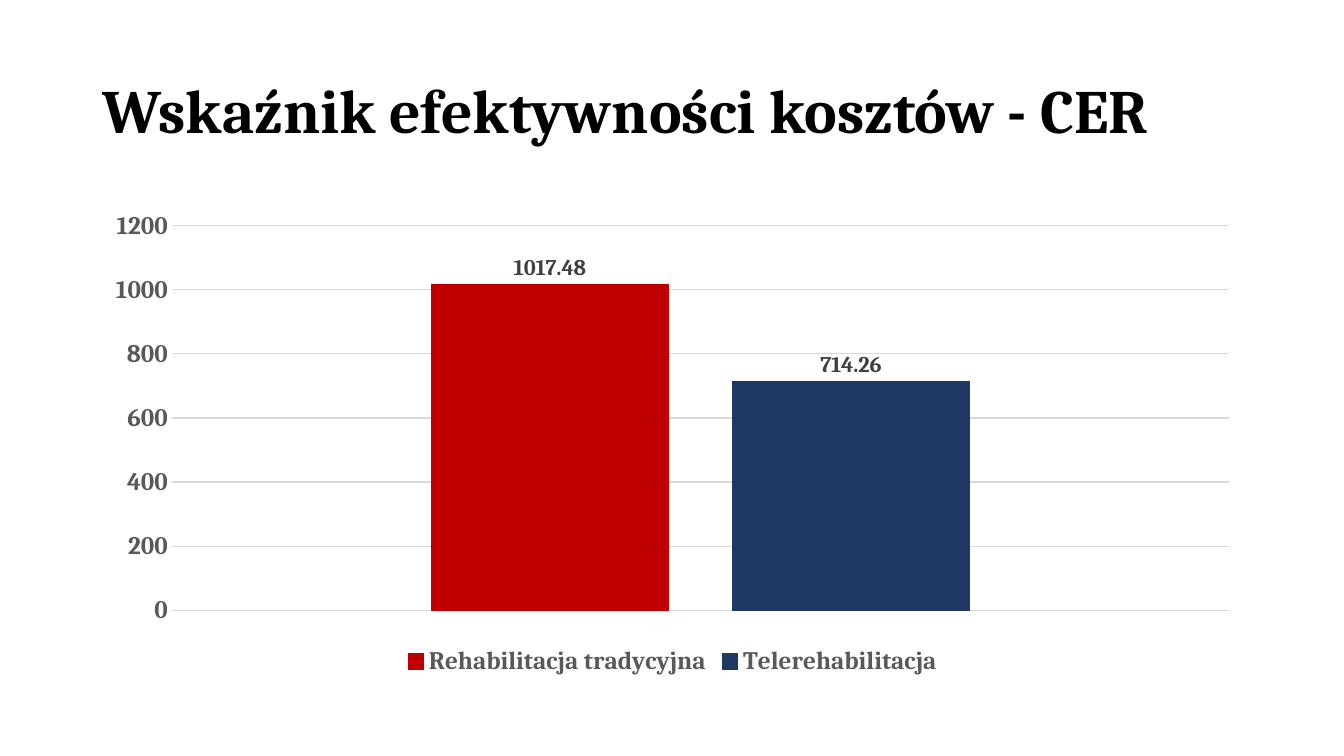
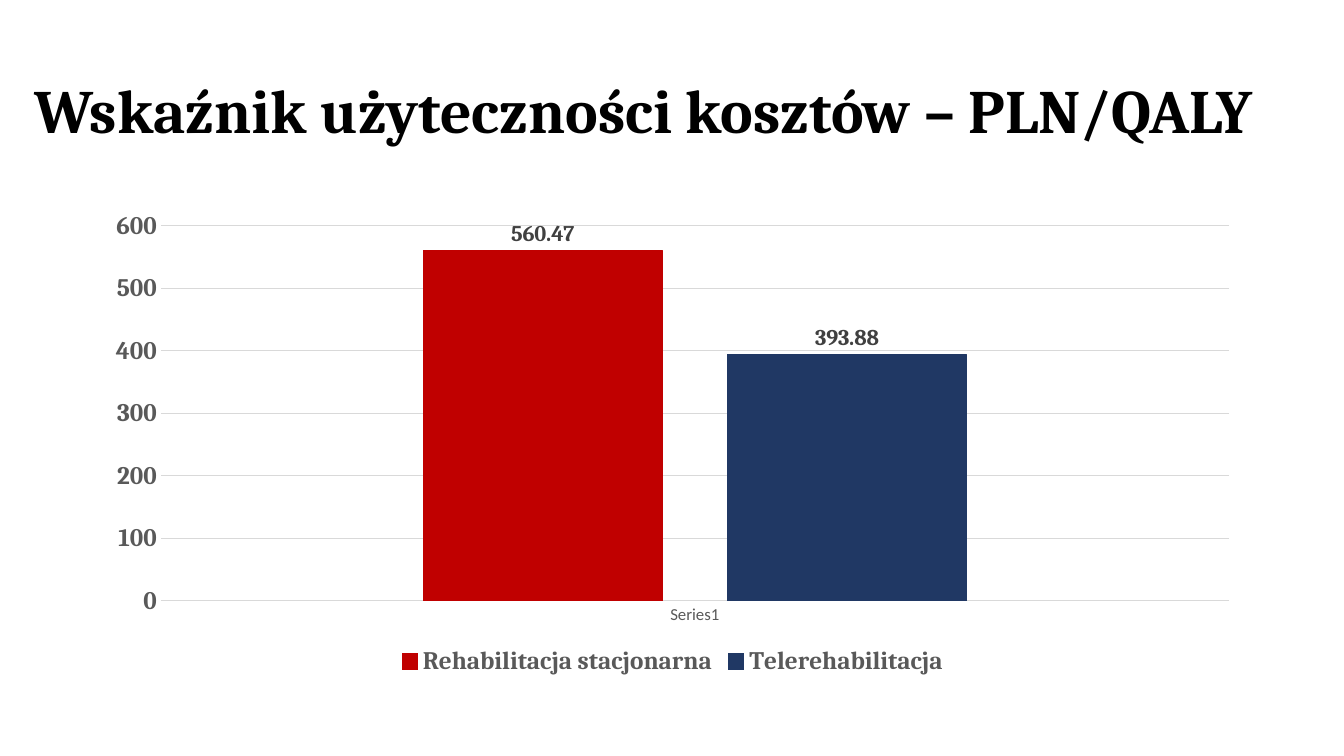
from pptx import Presentation
from pptx.chart.data import CategoryChartData
from pptx.dml.color import RGBColor
from pptx.enum.chart import XL_CHART_TYPE, XL_LABEL_POSITION, XL_LEGEND_POSITION, XL_TICK_MARK
from pptx.enum.text import MSO_ANCHOR, MSO_AUTO_SIZE, PP_ALIGN
from pptx.util import Inches, Pt

COLUMNS = XL_CHART_TYPE.COLUMN_CLUSTERED
OUTSIDE_END = XL_LABEL_POSITION.OUTSIDE_END
BOTTOM = XL_LEGEND_POSITION.BOTTOM
NO_TICK = XL_TICK_MARK.NONE
MIDDLE = MSO_ANCHOR.MIDDLE
NO_FIT = MSO_AUTO_SIZE.NONE
LEFT = PP_ALIGN.LEFT

COLORS = {
    "title": "000000",
    "axis": "595959",
    "label": "404040",
    "grid": "D9D9D9",
    "traditional": "C00000",
    "remote": "203864",
}
SERIES_COLORS = ("traditional", "remote")
HEADING_FONT = "Cambria"
BODY_FONT = "Calibri"
CHART_BOX = (0.92, 2, 11.5, 4.76)


def rgb(name):
    return RGBColor.from_string(COLORS[name])


def format_font(font, size, color, name=HEADING_FONT, bold=True):
    font.name = name
    font.size = Pt(size)
    font.bold = bold
    font.color.rgb = rgb(color)


def format_line(line, color):
    line.color.rgb = rgb(color)
    line.width = Pt(0.75)


def write_text(tf, text, size=44, color="title", align=LEFT, spacing=0.9):
    tf.word_wrap = True
    tf.auto_size = NO_FIT
    tf.vertical_anchor = MIDDLE
    p = tf.paragraphs[0]
    p.alignment = align
    p.line_spacing = spacing
    r = p.add_run()
    r.text = text
    format_font(r.font, size, color)


def add_titled_slide(prs, title, left, width):
    s = prs.slides.add_slide(prs.slide_layouts[5])
    sp = s.shapes.title
    sp.left, sp.top = Inches(left), Inches(0.4)
    sp.width, sp.height = Inches(width), Inches(1.45)
    write_text(sp.text_frame, title)
    return s


def format_value_axis(axis, maximum, step):
    axis.minimum_scale = 0
    axis.maximum_scale = maximum
    axis.major_unit = step
    axis.major_tick_mark = NO_TICK
    axis.format.line.fill.background()
    format_line(axis.major_gridlines.format.line, "grid")
    format_font(axis.tick_labels.font, 18, "axis")


def format_category_axis(axis, visible):
    axis.visible = visible
    axis.major_tick_mark = NO_TICK
    format_line(axis.format.line, "grid")
    format_font(axis.tick_labels.font, 12, "axis", name=BODY_FONT, bold=False)


def format_series(series, color):
    series.format.fill.solid()
    series.format.fill.fore_color.rgb = rgb(color)
    format_line(series.format.line, color)
    labels = series.data_labels
    labels.show_value = True
    labels.position = OUTSIDE_END
    format_font(labels.font, 16, "label")


def add_column_chart(s, category, values, maximum, step, show_category):
    """Add a chart with one column per entry of values (series name to value)."""
    data = CategoryChartData()
    data.categories = [category]
    for name, value in values.items():
        data.add_series(name, [value])
    box = [Inches(n) for n in CHART_BOX]
    chart = s.shapes.add_chart(COLUMNS, *box, data).chart
    chart.has_title = False
    chart.font.name = BODY_FONT
    chart.font.size = Pt(10)

    chart.has_legend = True
    chart.legend.position = BOTTOM
    chart.legend.include_in_layout = False
    format_font(chart.legend.font, 18, "axis")

    format_value_axis(chart.value_axis, maximum, step)
    format_category_axis(chart.category_axis, show_category)

    plot = chart.plots[0]
    plot.gap_width = 219
    plot.overlap = -27
    plot.vary_by_categories = False
    for series, color in zip(plot.series, SERIES_COLORS):
        format_series(series, color)


def main():
    prs = Presentation()
    prs.slide_width, prs.slide_height = Inches(13.33), Inches(7.5)

    s = add_titled_slide(prs, "Wskaźnik efektywności kosztów - CER", 0.92, 11.5)
    values = {"Rehabilitacja tradycyjna": 1017.48, "Telerehabilitacja": 714.26}
    add_column_chart(s, "1", values, 1200, 200, show_category=False)

    s = add_titled_slide(prs, "Wskaźnik użyteczności kosztów – PLN/QALY", 0.24, 12.88)
    values = {"Rehabilitacja stacjonarna": 560.47, "Telerehabilitacja": 393.88}
    add_column_chart(s, "Series1", values, 600, 100, show_category=True)

    prs.save("out.pptx")


if __name__ == "__main__":
    main()
